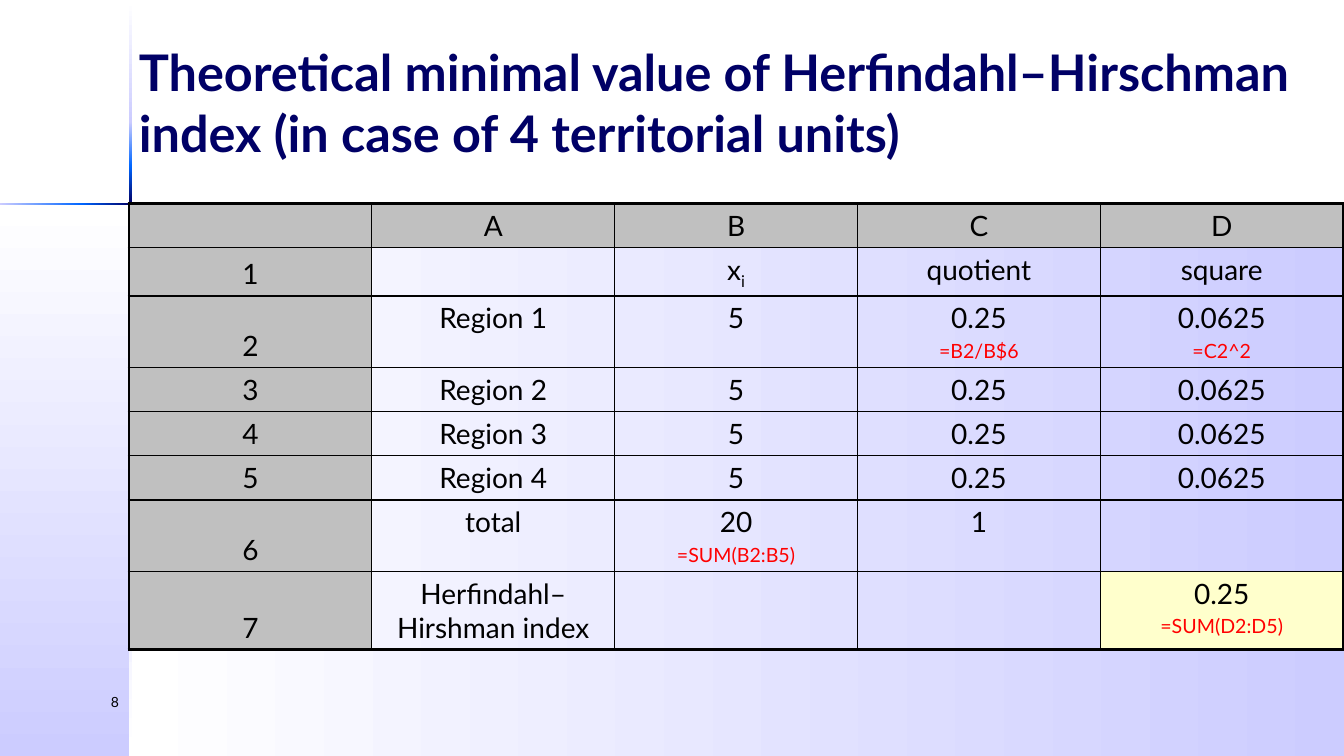
from lxml import etree
from pptx import Presentation
from pptx import util as u
from pptx.dml.color import RGBColor
from pptx.enum import shapes, text
from pptx.oxml.ns import qn

COLORS = {"white": "FFFFFF", "lilac": "CCCCFF", "blue": "0066FF", "navy": "000066",
          "black": "000000", "red": "FF0000", "grey": "C0C0C0", "cream": "FFFFCC"}
ACROSS, DOWN = 0, 270
THIN, THICK = u.Pt(1), u.Pt(2.25)
ALIGN, ANCHOR = text.PP_ALIGN, text.MSO_ANCHOR


class IndexSlide:
    """Draws the elements of one slide in a shared style."""

    def __init__(self, slide, font="Lato"):
        self.slide = slide
        self.font = font

    def style(self, paragraph, size, color="black", bold=False, align=ALIGN.LEFT):
        paragraph.alignment = align
        font = paragraph.font
        font.name, font.size, font.bold = self.font, u.Pt(size), bold
        font.color.rgb = RGBColor.from_string(COLORS[color])

    def gradient(self, left, top, width, height, colors, angle):
        panel = self.slide.shapes.add_shape(
            shapes.MSO_SHAPE.RECTANGLE, *map(u.Cm, (left, top, width, height)))
        panel.shadow.inherit = False
        panel.line.fill.background()
        panel.fill.gradient()
        panel.fill.gradient_angle = angle
        stops = panel.element.spPr.find(".//" + qn("a:gsLst"))
        for stop in list(stops):
            stops.remove(stop)
        for i, color in enumerate(colors):
            position = 100000 * i // (len(colors) - 1)
            stop = etree.SubElement(stops, qn("a:gs"), pos=str(position))
            etree.SubElement(stop, qn("a:srgbClr"), val=COLORS[color])

    def label(self, left, top, width, height, words, size, anchor=ANCHOR.TOP, **style):
        box = self.slide.shapes.add_textbox(*map(u.Cm, (left, top, width, height)))
        frame = box.text_frame
        frame.word_wrap = True
        frame.vertical_anchor = anchor
        frame.text = words
        self.style(frame.paragraphs[0], size, **style)

    def borders(self, cell, widths):
        properties = cell._tc.get_or_add_tcPr()
        for side, width in zip("LRTB", widths):
            line = etree.SubElement(properties, qn(f"a:ln{side}"), w=str(int(width)))
            fill = etree.SubElement(line, qn("a:solidFill"))
            etree.SubElement(fill, qn("a:srgbClr"), val=COLORS["black"])

    def cell_text(self, cell, content):
        value, *formula = content.split("\n")
        base, *subscript = value.split("_")
        paragraph = cell.text_frame.paragraphs[0]
        self.style(paragraph, 20, align=ALIGN.CENTER)
        if base:
            paragraph.add_run().text = base
        for index in subscript:
            run = paragraph.add_run()
            run.text = index
            run.font._element.set("baseline", "-25000")
        for expression in formula:
            paragraph = cell.text_frame.add_paragraph()
            paragraph.text = expression
            paragraph.space_before = u.Pt(2.8)
            self.style(paragraph, 14, "red", align=ALIGN.CENTER)

    def sheet(self, left, top, width, heights, rows):
        last_row, last_column = len(rows) - 1, len(rows[0]) - 1
        table = self.slide.shapes.add_table(
            len(rows), len(rows[0]),
            *map(u.Cm, (left, top, width, sum(heights)))).table
        table.first_row = table.horz_banding = False
        for row, height in zip(table.rows, heights):
            row.height = u.Cm(height)
        for r, row in enumerate(rows):
            for c, content in enumerate(row):
                cell = table.cell(r, c)
                edges = (c == 0, c == last_column, r == 0, r == last_row)
                self.borders(cell, [THICK if edge else THIN for edge in edges])
                self.cell_text(cell, content)
                if c == 0 and r > 0:
                    cell.vertical_anchor = ANCHOR.BOTTOM
                if r == 0 or c == 0:
                    color = "grey"
                elif (r, c) == (last_row, last_column):
                    color = "cream"
                else:
                    cell.fill.background()
                    continue
                cell.fill.solid()
                cell.fill.fore_color.rgb = RGBColor.from_string(COLORS[color])


def main():
    deck = Presentation()
    deck.slide_width, deck.slide_height = u.Cm(33.87), u.Cm(19.05)
    page = IndexSlide(deck.slides.add_slide(deck.slide_layouts[6]))

    page.gradient(3.27, 5.13, 30.6, 13.92, ["white", "lilac"], ACROSS)
    page.gradient(0, 5.13, 3.27, 13.92, ["white", "lilac"], DOWN)

    rise, peak, fall = ["lilac", "blue"], ["blue", "navy", "blue"], ["blue", "lilac"]
    fade = ["lilac", "white"]
    upright = [0.03, 3.07, 4.19, 6.05, 7.16, 19.05]
    for start, end, colors in zip(upright, upright[1:],
                                  [fade[::-1], rise, peak, fall, fade]):
        page.gradient(3.25, start, 0.08, end - start, colors, DOWN)
    level = [0, 2.06, 4.52, 5.99, 33.87]
    for start, end, colors in zip(level, level[1:], [rise, peak, fall, fade]):
        page.gradient(start, 5.11, end - start, 0.05, colors, ACROSS)

    page.label(0, 17.35, 3.25, 1.27, "8", 10, align=ALIGN.RIGHT)
    page.label(3.25, 0, 30.6, 5.13,
               "Theoretical minimal value of Herfindahl–Hirschman index "
               "(in case of 4 territorial units)",
               36, ANCHOR.MIDDLE, color="navy", bold=True)

    regions = [[str(n + 1), f"Region {n}", "5", "0.25", "0.0625"] for n in range(1, 5)]
    regions[0][3:] = ["0.25\n=B2/B$6", "0.0625\n=C2^2"]
    rows = [
        ["", "A", "B", "C", "D"],
        ["1", "", "x_i", "quotient", "square"],
        *regions,
        ["6", "total", "20\n=SUM(B2:B5)", "1", ""],
        ["7", "Herfindahl–Hirshman index", "", "", "0.25\n=SUM(D2:D5)"],
    ]
    heights = [1.11, 1.21, 1.81, 1.11, 1.11, 1.11, 1.81, 1.95]
    page.sheet(3.25, 5.13, 30.6, heights, rows)
    deck.save("out.pptx")


if __name__ == "__main__":
    main()
